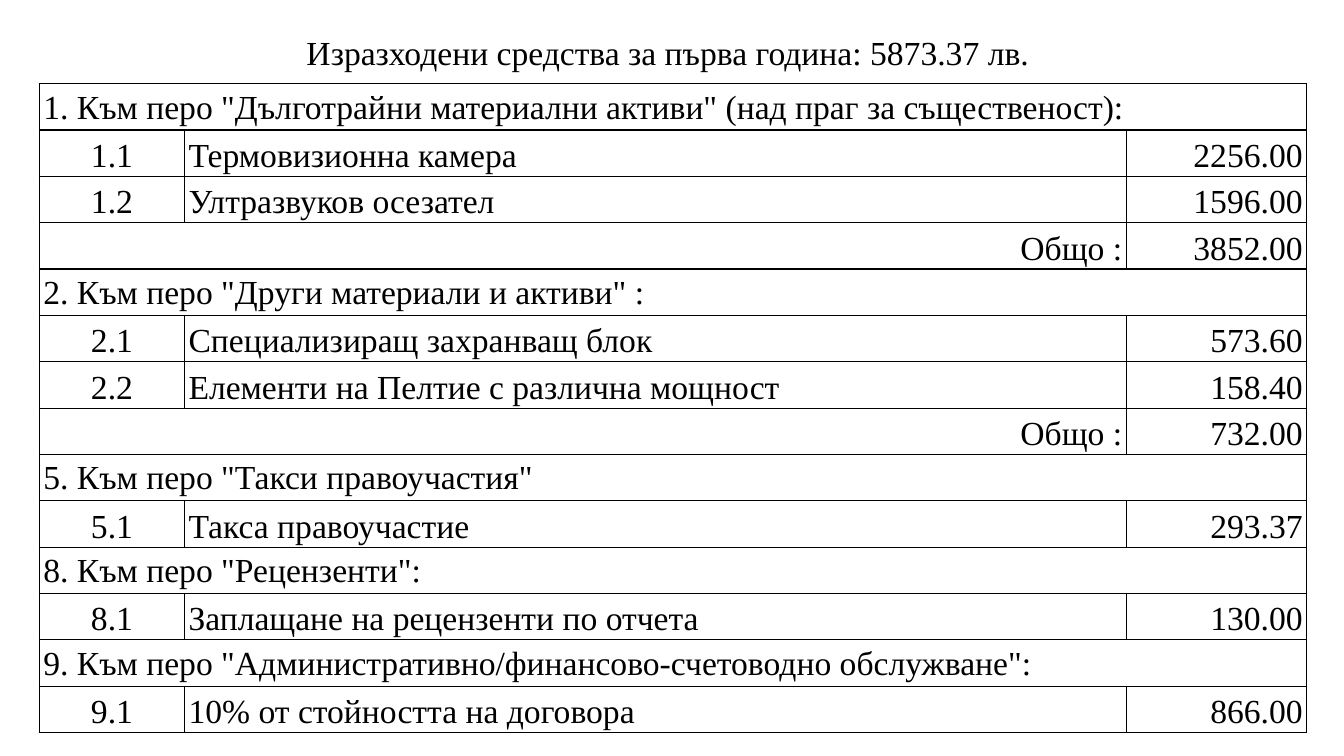
from lxml.etree import SubElement
from pptx import Presentation
from pptx.dml.color import RGBColor
from pptx.enum.text import MSO_ANCHOR as ANCHOR, MSO_AUTO_SIZE as AUTO, PP_ALIGN as AL
from pptx.oxml.ns import qn
from pptx.util import Inches, Pt

BLACK = RGBColor(0x00, 0x00, 0x00)
WHITE = RGBColor(0xFF, 0xFF, 0xFF)
FONT = {"name": "Times New Roman", "size": Pt(24), "bold": False}
CELL = {"margin_left": Inches(0.04), "margin_right": Inches(0.04),
        "margin_top": 0, "margin_bottom": 0}
TITLE_BOX = {"left": Inches(1.79), "top": Inches(0.27),
             "width": Inches(9.75), "height": Inches(0.5)}
TITLE_FRAME = {"word_wrap": True, "auto_size": AUTO.NONE,
               "vertical_anchor": ANCHOR.TOP}
COLUMNS = [1.44, 9.34, 1.79]
ROW_HEIGHT = 0.46
TOTAL = "Общо :"

# Each section: heading, items (number, name, amount), total if shown
SECTIONS = [
    ('1. Към перо "Дълготрайни материални активи" (над праг за същественост):',
     [("1.1", "Термовизионна камера", "2256.00"),
      ("1.2", "Ултразвуков осезател", "1596.00")], "3852.00"),
    ('2. Към перо "Други материали и активи" :',
     [("2.1", "Специализиращ захранващ блок", "573.60"),
      ("2.2", "Елементи на Пелтие с различна мощност", "158.40")], "732.00"),
    ('5. Към перо "Такси правоучастия"',
     [("5.1", "Такса правоучастие", "293.37")], None),
    ('8. Към перо "Рецензенти":',
     [("8.1", "Заплащане на рецензенти по отчета", "130.00")], None),
    ('9. Към перо "Административно/финансово-счетоводно обслужване":',
     [("9.1", "10% от стойността на договора", "866.00")], None),
]


def set_attrs(obj, values):
    for name, value in values.items():
        setattr(obj, name, value)


def write(tf, text, align, spacing=1.0):
    p = tf.paragraphs[0]
    p.alignment, p.line_spacing = align, spacing
    r = p.add_run()
    r.text = text
    set_attrs(r.font, FONT)
    r.font.color.rgb = BLACK


def add_title(s, text):
    sp = s.shapes.title
    set_attrs(sp, TITLE_BOX)
    set_attrs(sp.text_frame, TITLE_FRAME)
    write(sp.text_frame, text, AL.CENTER)


def add_borders(cell):
    tc_pr = cell._tc.get_or_add_tcPr()
    for side in ("a:lnL", "a:lnR", "a:lnT", "a:lnB"):
        line = SubElement(tc_pr, qn(side), w=str(Pt(1)))
        fill = SubElement(line, qn("a:solidFill"))
        SubElement(fill, qn("a:srgbClr"), val=str(BLACK))


def table_rows():
    """Return rows as lists of (text, alignment, column span)."""
    rows = []
    for heading, items, total in SECTIONS:
        rows.append([(heading, AL.LEFT, 3)])
        for number, name, amount in items:
            rows.append([(number, AL.CENTER, 1), (name, AL.LEFT, 1),
                         (amount, AL.RIGHT, 1)])
        if total:
            rows.append([(TOTAL, AL.RIGHT, 2), (total, AL.RIGHT, 1)])
    return rows


def add_expenses(s, rows):
    frame = s.shapes.add_table(len(rows), len(COLUMNS), Inches(0.39), Inches(0.83),
                               Inches(sum(COLUMNS)), Inches(ROW_HEIGHT * len(rows)))
    table = frame.table
    set_attrs(table, {"first_row": False, "horz_banding": False})
    for column, width in zip(table.columns, COLUMNS):
        column.width = Inches(width)
    for i, row in enumerate(rows):
        table.rows[i].height = Inches(ROW_HEIGHT)
        # Frame the grid cells before merging
        for j in range(len(COLUMNS)):
            cell = table.cell(i, j)
            add_borders(cell)
            cell.fill.solid()
            cell.fill.fore_color.rgb = WHITE
        # Text, with spans for headings and totals
        j = 0
        for text, align, span in row:
            cell = table.cell(i, j)
            if span > 1:
                cell.merge(table.cell(i, j + span - 1))
            set_attrs(cell, CELL)
            cell.vertical_anchor = ANCHOR.TOP if span == 3 else ANCHOR.MIDDLE
            write(cell.text_frame, text, align, 1.15)
            j += span


def main():
    prs = Presentation()
    prs.slide_width, prs.slide_height = Inches(13.33), Inches(7.5)
    s = prs.slides.add_slide(prs.slide_layouts[5])
    add_title(s, "Изразходени средства за първа година: 5873.37 лв. ")
    add_expenses(s, table_rows())
    prs.save("out.pptx")


if __name__ == "__main__":
    main()
